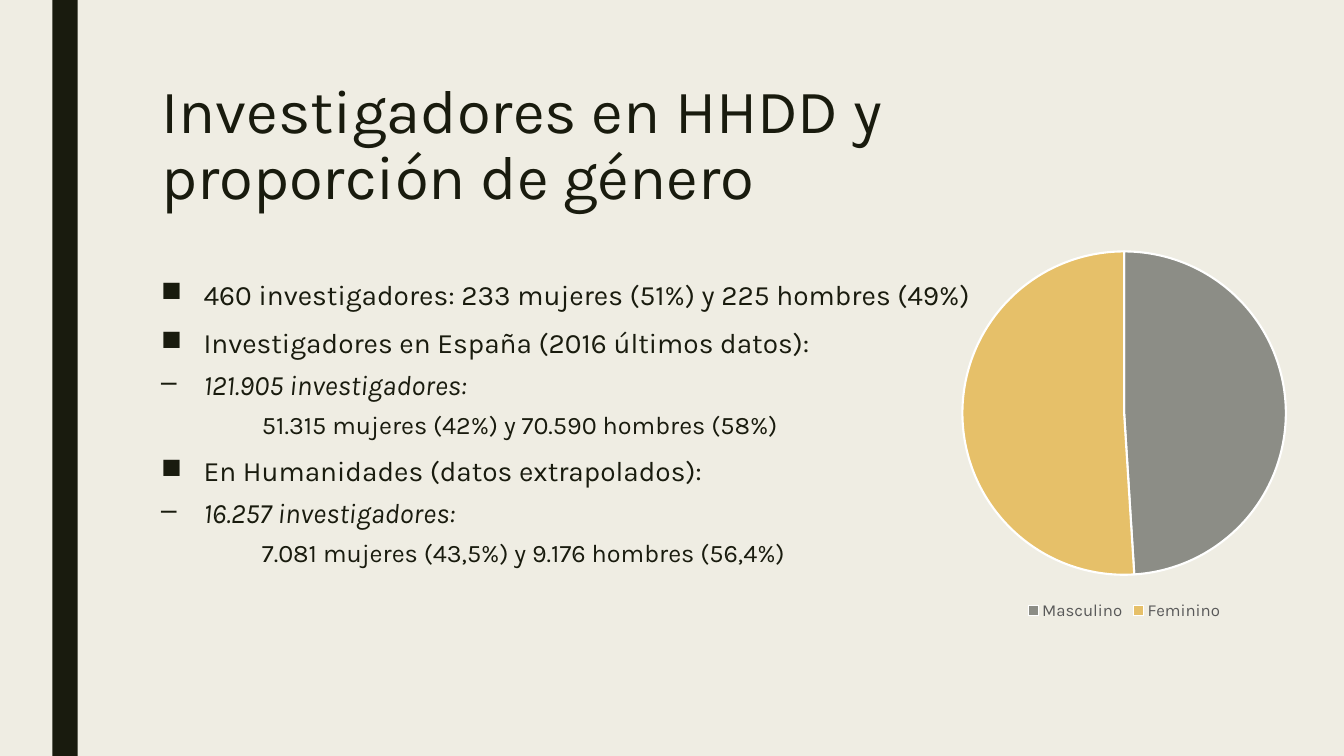
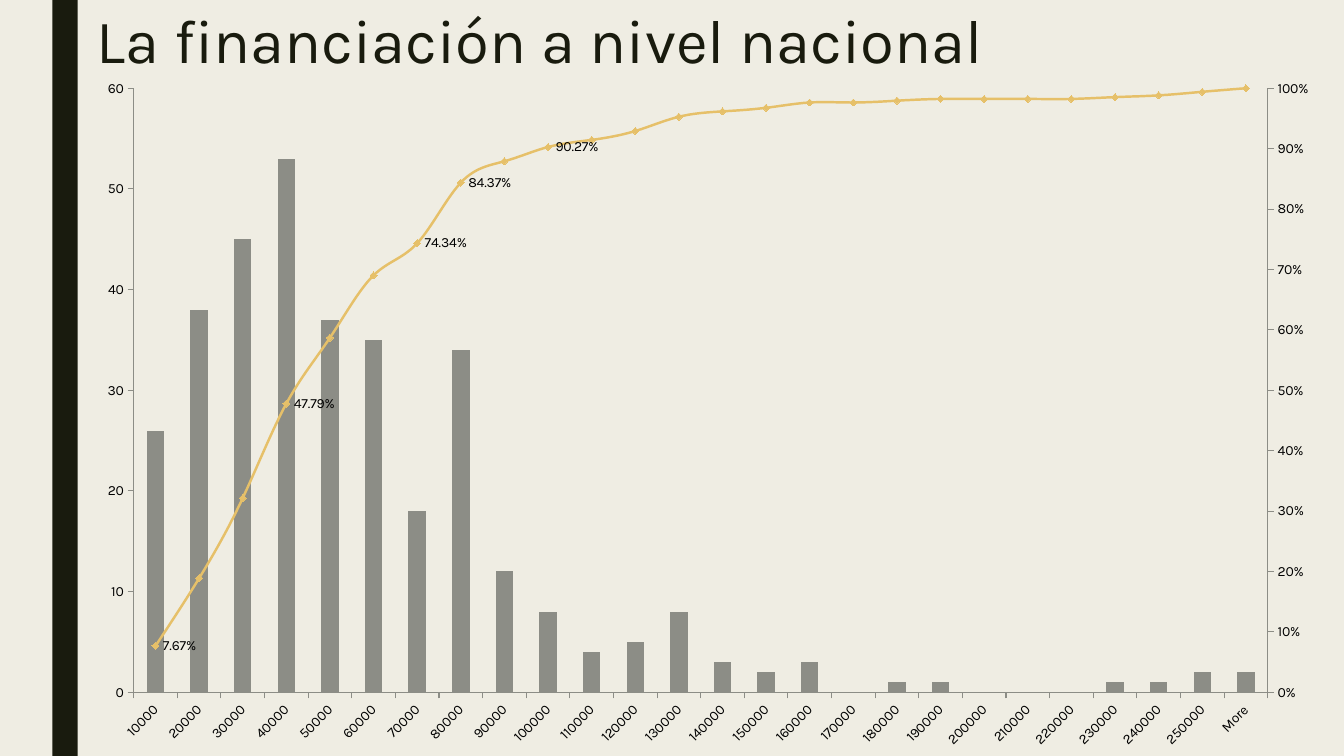
import copy

import pptx
import pptx.chart.axis
import pptx.chart.data
import pptx.dml.color
import pptx.enum.chart
import pptx.enum.shapes
import pptx.enum.text
import pptx.oxml
import pptx.oxml.ns
import pptx.util

Inches, Pt = pptx.util.Inches, pptx.util.Pt
Color = pptx.dml.color.RGBColor
Charts = pptx.enum.chart

# Shared look
FONT = "Karla"
PAPER = Color(0xEF, 0xED, 0xE3)
INK = Color(0x19, 0x1B, 0x0E)
GRAY = Color(0x8C, 0x8D, 0x86)
GOLD = Color(0xE6, 0xC0, 0x69)
LEGEND_GRAY = Color(0x59, 0x59, 0x59)
WHITE = Color(0xFF, 0xFF, 0xFF)
BLACK = Color(0, 0, 0)

# Researchers: (level, text)
GENDER_TITLE = "Investigadores en HHDD y proporción de género"
GENDER_POINTS = [
    (0, "460 investigadores: 233 mujeres (51%) y 225 hombres (49%)"),
    (0, "Investigadores en España (2016 últimos datos):"),
    (1, "121.905 investigadores:"),
    (2, "51.315 mujeres (42%) y 70.590 hombres (58%)"),
    (0, "En Humanidades (datos extrapolados):"),
    (1, "16.257 investigadores:"),
    (2, "7.081 mujeres (43,5%) y 9.176 hombres (56,4%)"),
]
LEVELS = [
    {"size": 20, "italic": False, "before": 10, "left": 0.42, "bullet": "■"},
    {"size": 20, "italic": True, "before": 5, "left": 0.42, "bullet": "–"},
    {"size": 18, "italic": False, "before": 5, "left": 1, "bullet": None},
]
GENDER_SHARES = {"Masculino": 49, "Feminino": 51}

# Funding: number of projects per amount, and cumulative share
FUNDING_TITLE = "La financiación a nivel nacional"
AMOUNTS = [str(step * 10000) for step in range(1, 26)] + ["More"]
COUNTS = [26, 38, 45, 53, 37, 35, 18, 34, 12, 8, 4, 5, 8,
          3, 2, 3, 0, 1, 1, 0, 0, 0, 1, 1, 2, 2]
CUMULATIVE = [0.0767, 0.1888, 0.3215, 0.4779, 0.587, 0.6903, 0.7434, 0.8437,
              0.8791, 0.9027, 0.9145, 0.9292, 0.9528, 0.9617, 0.9676, 0.9764,
              0.9764, 0.9794, 0.9823, 0.9823, 0.9823, 0.9823, 0.9853, 0.9882,
              0.9941, 1]
LABELLED = {0, 3, 6, 7, 9}


def apply(target, values):
    for name, value in values.items():
        setattr(target, name, value)


def set_font(font, size, color, italic=False):
    apply(font, {"name": FONT, "size": Pt(size), "italic": italic})
    font.color.rgb = color


def chart_xml(text):
    return pptx.oxml.parse_xml(
        text.replace(">", f' {pptx.oxml.ns.nsdecls("c")}>', 1))


def add_page(deck, title, left, top):
    page = deck.slides.add_slide(deck.slide_layouts[5])
    page.background.fill.solid()
    page.background.fill.fore_color.rgb = PAPER
    # Side band
    band = page.shapes.add_shape(
        pptx.enum.shapes.MSO_SHAPE.RECTANGLE,
        Inches(0.52), 0, Inches(0.25), deck.slide_height)
    band.shadow.inherit = False
    band.fill.solid()
    band.fill.fore_color.rgb = INK
    band.line.fill.background()
    # Title
    box = page.shapes.title
    apply(box, {"left": Inches(left), "top": Inches(top),
                "width": Inches(10), "height": Inches(1.62)})
    apply(box.text_frame, {
        "text": title, "word_wrap": True,
        "auto_size": pptx.enum.text.MSO_AUTO_SIZE.NONE,
        "vertical_anchor": pptx.enum.text.MSO_ANCHOR.TOP})
    para = box.text_frame.paragraphs[0]
    apply(para, {"alignment": pptx.enum.text.PP_ALIGN.LEFT,
                 "line_spacing": 0.89})
    set_font(para.runs[0].font, 44, INK)
    return page


def add_points(page, points):
    box = page.shapes.add_textbox(
        Inches(1.5), Inches(2.73), Inches(8.38), Inches(3.11))
    frame = box.text_frame
    frame.word_wrap = True
    for number, (level, text) in enumerate(points):
        style = LEVELS[level]
        para = frame.add_paragraph() if number else frame.paragraphs[0]
        apply(para, {"level": level, "line_spacing": 0.94,
                     "space_before": Pt(style["before"]),
                     "space_after": Pt(2)})
        span = para.add_run()
        span.text = text
        set_font(span.font, style["size"], INK, style["italic"])
        # Indent and bullet
        props = para._p.get_or_add_pPr()
        left = Inches(style["left"])
        props.set("marL", str(left))
        props.set("indent", str(-left if style["bullet"] else 0))
        if style["bullet"]:
            props.append(pptx.oxml.parse_xml(
                f'<a:buChar {pptx.oxml.ns.nsdecls("a")} '
                f'char="{style["bullet"]}"/>'))


def add_chart(page, kind, area, plot, categories, *series):
    data = pptx.chart.data.CategoryChartData()
    data.categories = categories
    for number, values in enumerate(series, 1):
        data.add_series(f"Series {number}", values)
    chart = page.shapes.add_chart(kind, *map(Inches, area), data).chart
    apply(chart, {"has_title": False, "has_legend": False})
    set_font(chart.font, 10, BLACK)
    # Fixed inner plot area, as fractions of the chart
    plot_area = chart._chartSpace.chart.plotArea
    for old in plot_area.xpath("c:layout"):
        plot_area.remove(old)
    places = "".join(f'<c:{key} val="{value}"/>'
                     for key, value in zip("xywh", plot))
    plot_area.insert(0, chart_xml(
        '<c:layout><c:manualLayout><c:layoutTarget val="inner"/>'
        '<c:xMode val="edge"/><c:yMode val="edge"/>'
        f'{places}</c:manualLayout></c:layout>'))
    return chart


def add_gender_pie(page):
    chart = add_chart(
        page, Charts.XL_CHART_TYPE.PIE, (8.97, 2.38, 4.36, 3.82),
        (0.13, 0.03, 0.74, 0.84), list(GENDER_SHARES),
        list(GENDER_SHARES.values()))
    chart.has_legend = True
    apply(chart.legend, {"position": Charts.XL_LEGEND_POSITION.BOTTOM,
                         "include_in_layout": False})
    set_font(chart.legend.font, 12, LEGEND_GRAY)
    for number, color in enumerate((GRAY, GOLD)):
        look = chart.plots[0].series[0].points[number].format
        look.fill.solid()
        look.fill.fore_color.rgb = color
        look.line.color.rgb = WHITE
        look.line.width = Pt(1.5)


def style_axis(axis):
    apply(axis, {"has_major_gridlines": False,
                 "major_tick_mark": Charts.XL_TICK_MARK.OUTSIDE,
                 "minor_tick_mark": Charts.XL_TICK_MARK.NONE})
    axis.format.line.color.rgb = GRAY
    axis.format.line.width = Pt(0.75)
    set_font(axis.tick_labels.font, 10, BLACK)


def scale_axis(axis, top, step, number_format):
    apply(axis, {"minimum_scale": 0, "maximum_scale": top,
                 "major_unit": step})
    apply(axis.tick_labels, {"number_format": number_format,
                             "number_format_is_linked": False})


def move_to_right_axis(chart):
    """Turn the second column series into a line with its own axes."""
    plot_area = chart._chartSpace.chart.plotArea
    bars = plot_area.xpath("c:barChart")[0]
    series = bars.xpath("c:ser")[1]
    for flag in series.xpath("c:invertIfNegative"):
        series.remove(flag)
    lines = chart_xml(
        '<c:lineChart><c:grouping val="standard"/><c:varyColors val="0"/>'
        '<c:marker val="1"/><c:axId val="5001"/><c:axId val="5002"/>'
        '</c:lineChart>')
    lines.insert(2, series)
    bars.addnext(lines)
    # Twin axes: hidden categories, values on the right
    changes = [
        (chart.category_axis, {"axId": 5001, "crossAx": 5002, "delete": 1}),
        (chart.value_axis, {"axId": 5002, "crossAx": 5001, "axPos": "r",
                            "crosses": "max"}),
    ]
    for axis, values in changes:
        twin = copy.deepcopy(axis._element)
        for tag, value in values.items():
            twin.xpath(f"c:{tag}")[0].set("val", str(value))
        plot_area.xpath("c:catAx | c:valAx")[-1].addnext(twin)
    return pptx.chart.axis.ValueAxis(twin)


def add_funding_chart(page):
    chart = add_chart(
        page, Charts.XL_CHART_TYPE.COLUMN_CLUSTERED,
        (1.01, 0.72, 12.16, 6.78), (0.026, 0.023, 0.925, 0.884),
        AMOUNTS, COUNTS, CUMULATIVE)
    for axis in (chart.category_axis, chart.value_axis):
        style_axis(axis)
    right_axis = move_to_right_axis(chart)
    scale_axis(chart.value_axis, 60, 10, "0")
    scale_axis(right_axis, 1, 0.1, "0%")
    chart.category_axis._element.xpath("c:txPr/a:bodyPr")[0].set(
        "rot", str(-45 * 60000))
    # Columns
    columns, lines = chart.plots
    apply(columns, {"gap_width": 150, "vary_by_categories": False})
    fill = columns.series[0].format.fill
    fill.solid()
    fill.fore_color.rgb = GRAY
    # Cumulative line
    curve = lines.series[0]
    curve.smooth = True
    curve.format.line.color.rgb = GOLD
    curve.format.line.width = Pt(1.75)
    apply(curve.marker, {"style": Charts.XL_MARKER_STYLE.DIAMOND, "size": 5})
    curve.marker.format.fill.solid()
    curve.marker.format.fill.fore_color.rgb = GOLD
    curve.marker.format.line.color.rgb = GOLD
    # Labels on selected points only
    labels = curve.data_labels
    apply(labels, {"show_value": True, "number_format": "0.00%",
                   "number_format_is_linked": False,
                   "position": Charts.XL_LABEL_POSITION.RIGHT})
    set_font(labels.font, 10, BLACK)
    hidden = [i for i in range(len(AMOUNTS)) if i not in LABELLED]
    for place, index in enumerate(hidden):
        labels._element.insert(place, chart_xml(
            f'<c:dLbl><c:idx val="{index}"/><c:delete val="1"/></c:dLbl>'))


def main():
    deck = pptx.Presentation()
    apply(deck, {"slide_width": Inches(13.33), "slide_height": Inches(7.5)})
    page = add_page(deck, GENDER_TITLE, 1.5, 0.75)
    add_points(page, GENDER_POINTS)
    add_gender_pie(page)
    page = add_page(deck, FUNDING_TITLE, 0.86, 0.06)
    add_funding_chart(page)
    deck.save("out.pptx")


if __name__ == "__main__":
    main()
